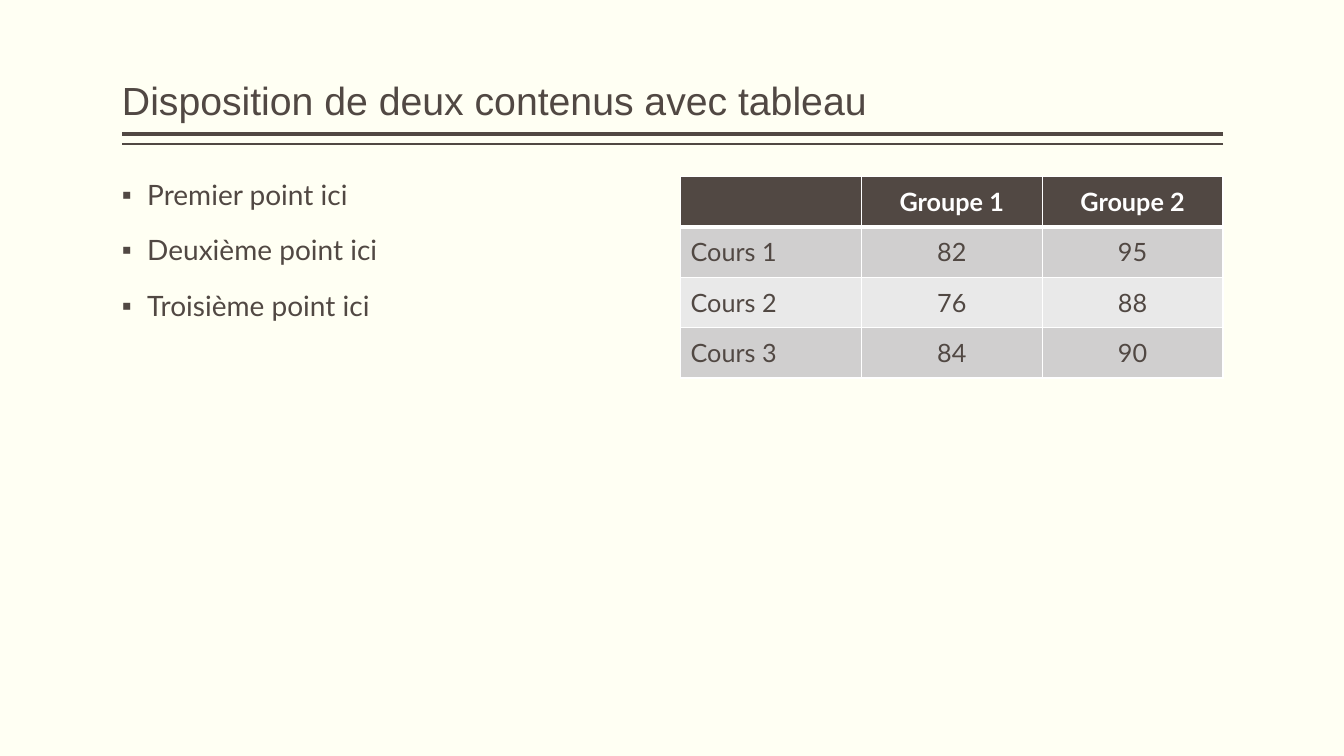
from lxml import etree
from pptx import Presentation
from pptx import util as u
from pptx.dml.color import RGBColor
from pptx.enum import shapes, text
from pptx.oxml import ns

INK, PAPER, WHITE = "514843", "FFFFF3", "FFFFFF"
BANDS = ["D0CFCF", "E9E9E9"]
LEFT, RIGHT, TOP = u.Inches(1.21), u.Inches(12.13), u.Inches(1.75)
COLUMN = u.Inches(5.38)


def rgb(code):
    return RGBColor.from_string(code)


def write(paragraph, words, size, font, color=INK, bold=False):
    run = paragraph.add_run()
    run.text = words
    run.font.size = u.Pt(size)
    run.font.name = font
    run.font.bold = bold
    run.font.color.rgb = rgb(color)


deck = Presentation()
deck.slide_width, deck.slide_height = u.Inches(13.33), u.Inches(7.5)
slide = deck.slides.add_slide(deck.slide_layouts[6])
slide.background.fill.solid()
slide.background.fill.fore_color.rgb = rgb(PAPER)

for height, weight in [(1.33, 3), (1.43, 1)]:
    rule = slide.shapes.add_connector(
        shapes.MSO_CONNECTOR.STRAIGHT, RIGHT, u.Inches(height), LEFT, u.Inches(height))
    rule.line.color.rgb = rgb(INK)
    rule.line.width = u.Pt(weight)
    etree.SubElement(rule._element.spPr, ns.qn("a:effectLst"))

title = slide.shapes.add_textbox(LEFT, u.Inches(0.08), RIGHT - LEFT, u.Inches(1.2)).text_frame
points = slide.shapes.add_textbox(LEFT, TOP, COLUMN, u.Inches(5)).text_frame
for frame in (title, points):
    frame.word_wrap = True
    frame.margin_left = frame.margin_right = 0
title.vertical_anchor = text.MSO_ANCHOR.BOTTOM
title.paragraphs[0].line_spacing = 0.9
write(title.paragraphs[0], "Disposition de deux contenus avec tableau", 28, "Arial")

for index, words in enumerate(["Premier point ici", "Deuxième point ici", "Troisième point ici"]):
    point = points.add_paragraph() if index else points.paragraphs[0]
    point.line_spacing = 0.9
    point.space_before = u.Pt(18)
    write(point, words, 20, "Lato")
    indent = point._p.get_or_add_pPr()
    indent.set("marL", str(u.Inches(0.25)))
    indent.set("indent", str(-u.Inches(0.25)))
    etree.SubElement(indent, ns.qn("a:buFont"), typeface="Arial")
    etree.SubElement(indent, ns.qn("a:buChar"), char="▪")

scores = [
    ["", "Groupe 1", "Groupe 2"],
    ["Cours 1", "82", "95"],
    ["Cours 2", "76", "88"],
    ["Cours 3", "84", "90"],
]
grid = slide.shapes.add_table(4, 3, RIGHT - COLUMN, TOP, COLUMN, u.Inches(2)).table
for r, row in enumerate(scores):
    for c, words in enumerate(row):
        cell = grid.cell(r, c)
        cell.vertical_anchor = text.MSO_ANCHOR.MIDDLE
        borders = cell._tc.get_or_add_tcPr()
        for side in "LRTB":
            heavy = (r, side) in [(0, "B"), (1, "T")]
            border = etree.SubElement(borders, ns.qn("a:ln" + side), w=str(u.Pt(3 if heavy else 1)))
            paint = etree.SubElement(border, ns.qn("a:solidFill"))
            etree.SubElement(paint, ns.qn("a:srgbClr"), val=WHITE)
        cell.fill.solid()
        cell.fill.fore_color.rgb = rgb(BANDS[(r - 1) % 2] if r else INK)
        if words:
            entry = cell.text_frame.paragraphs[0]
            entry.alignment = text.PP_ALIGN.CENTER if c else text.PP_ALIGN.LEFT
            write(entry, words, 18, "Lato", INK if r else WHITE, r == 0)

deck.save("out.pptx")
